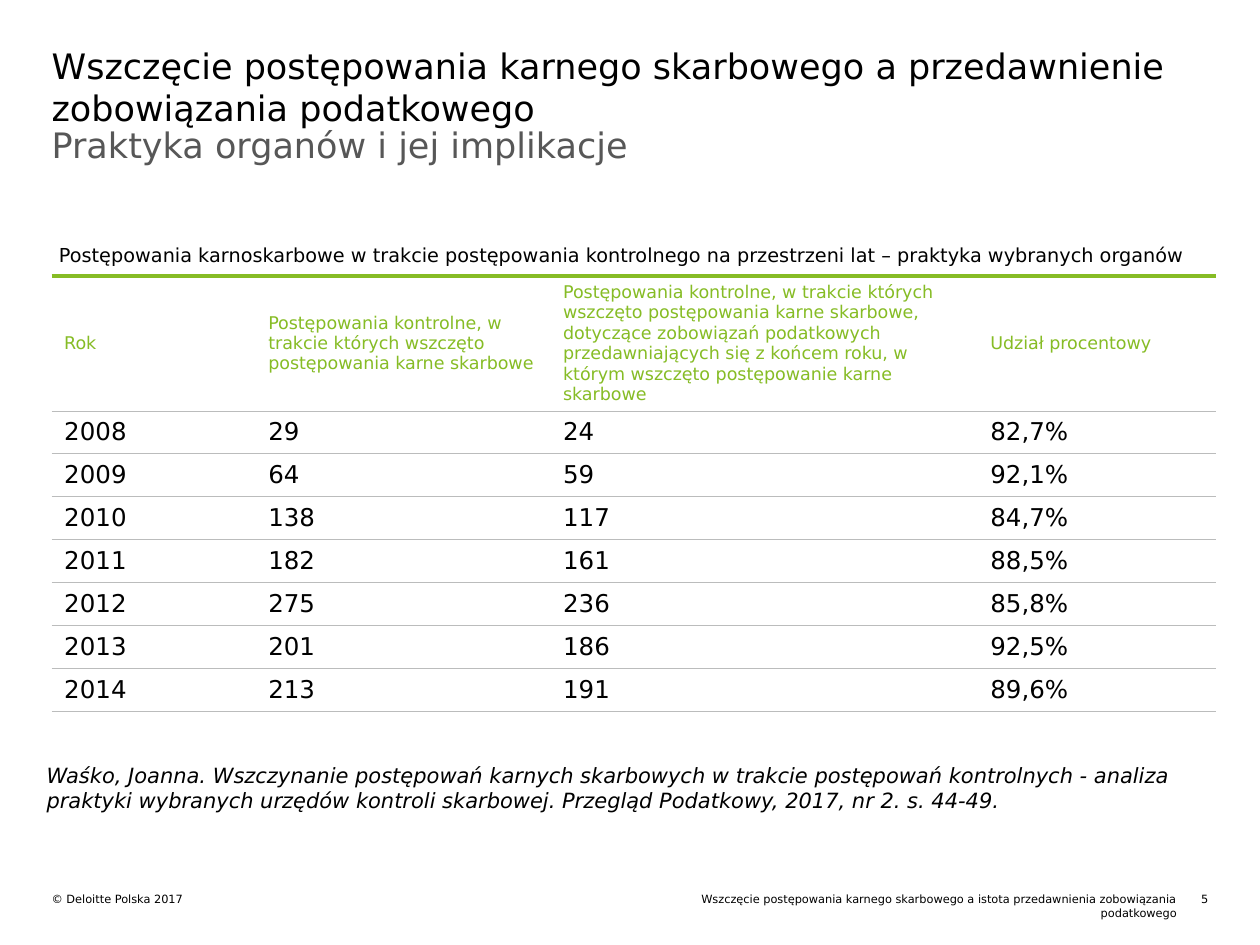
from dataclasses import dataclass

from lxml.etree import SubElement
from pptx import Presentation
from pptx.dml.color import RGBColor
from pptx.enum.text import MSO_ANCHOR as Anchor, PP_ALIGN as Align
from pptx.oxml.ns import qn
from pptx.util import Pt

FONT = "DejaVu Sans"
COLORS = {"black": "000000", "gray": "575757", "green": "86BC25", "rule": "BBBCBC"}
NO_STYLE = "{2D5ABB26-0587-4C30-8999-92F81FD0307C}"


@dataclass(frozen=True)
class Label:
    text: str
    left: float
    top: float
    width: float
    height: float
    size: float
    color: str = "black"
    align: Align = Align.LEFT
    italic: bool = False
    inset: tuple[float, float] = (0, 0)
    space_after: float = 0


@dataclass(frozen=True)
class Rule:
    color: str
    width: float


HEAVY = Rule("green", 3)
THIN = Rule("rule", 0.5)

LABELS = [
    Label("© Deloitte Polska 2017", 29.5, 509.8, 316, 8, 6.5),
    Label("Wszczęcie postępowania karnego skarbowego a istota przedawnienia "
          "zobowiązania podatkowego", 383, 509.8, 289.5, 16, 6.5, align=Align.RIGHT),
    Label("5", 672.5, 509.8, 18, 8, 6.5, align=Align.RIGHT),
    Label("Wszczęcie postępowania karnego skarbowego a przedawnienie "
          "zobowiązania podatkowego", 29.5, 25.2, 659.5, 26.6, 20),
    Label("Postępowania karnoskarbowe w trakcie postępowania kontrolnego na "
          "przestrzeni lat – praktyka wybranych organów",
          26.6, 135.4, 662.4, 22.3, 11, inset=(7.2, 3.6), space_after=10),
    Label("Praktyka organów i jej implikacje",
          29.5, 70.6, 659.5, 59.8, 20, "gray", space_after=10),
    Label("Waśko, Joanna. Wszczynanie postępowań karnych skarbowych w trakcie "
          "postępowań kontrolnych - analiza praktyki wybranych urzędów kontroli "
          "skarbowej. Przegląd Podatkowy, 2017, nr 2. s. 44-49.",
          26.6, 435.6, 668.2, 28.8, 12, italic=True),
]

STARTED = "Postępowania kontrolne, w trakcie których wszczęto postępowania karne skarbowe"
ROWS = [
    ("Rok", STARTED,
     STARTED + ", dotyczące zobowiązań podatkowych przedawniających się z końcem "
     "roku, w którym wszczęto postępowanie karne skarbowe", "Udział procentowy"),
    ("2008", "29", "24", "82,7%"),
    ("2009", "64", "59", "92,1%"),
    ("2010", "138", "117", "84,7%"),
    ("2011", "182", "161", "88,5%"),
    ("2012", "275", "236", "85,8%"),
    ("2013", "201", "186", "92,5%"),
    ("2014", "213", "191", "89,6%"),
]
COLUMN_WIDTHS = (116.6, 168.5, 244.1, 136.1)
HEADER_HEIGHT = 42
ROW_HEIGHT = 24.5


def add_span(para, text: str, size: float, color: str, italic: bool = False) -> None:
    span = para.add_run()
    span.text = text
    span.font.name = FONT
    span.font.size = Pt(size)
    span.font.italic = italic
    span.font.color.rgb = RGBColor.from_string(COLORS[color])


def add_label(page, label: Label) -> None:
    box = page.shapes.add_textbox(
        Pt(label.left), Pt(label.top), Pt(label.width), Pt(label.height))
    frame = box.text_frame
    frame.word_wrap = True
    frame.margin_left = frame.margin_right = Pt(label.inset[0])
    frame.margin_top = frame.margin_bottom = Pt(label.inset[1])
    para = frame.paragraphs[0]
    para.alignment = label.align
    para.space_after = Pt(label.space_after)
    add_span(para, label.text, label.size, label.color, label.italic)


def add_border(cell, side: str, rule: Rule) -> None:
    properties = cell._tc.get_or_add_tcPr()
    line = SubElement(properties, qn(f"a:{side}"), w=str(Pt(rule.width)))
    fill = SubElement(line, qn("a:solidFill"))
    SubElement(fill, qn("a:srgbClr"), val=COLORS[rule.color])


def fill_cell(cell, text: str, is_header: bool) -> None:
    cell.vertical_anchor = Anchor.MIDDLE
    cell.margin_left = cell.margin_right = Pt(7.2)
    cell.margin_top = cell.margin_bottom = Pt(3.6)
    add_border(cell, "lnT", HEAVY if is_header else THIN)
    add_border(cell, "lnB", THIN)
    cell.fill.background()
    size, color = (10, "green") if is_header else (14, "black")
    add_span(cell.text_frame.paragraphs[0], text, size, color)


def add_proceedings_table(page) -> None:
    height = HEADER_HEIGHT + ROW_HEIGHT * (len(ROWS) - 1)
    table = page.shapes.add_table(
        len(ROWS), len(COLUMN_WIDTHS), Pt(29.5), Pt(157.7),
        Pt(sum(COLUMN_WIDTHS)), Pt(height)).table
    table.first_row = False
    table.horz_banding = False
    table._tbl.tblPr.find(qn("a:tableStyleId")).text = NO_STYLE
    for column, width in zip(table.columns, COLUMN_WIDTHS):
        column.width = Pt(width)
    for index, values in enumerate(ROWS):
        is_header = index == 0
        table.rows[index].height = Pt(HEADER_HEIGHT if is_header else ROW_HEIGHT)
        for cell, text in zip(table.rows[index].cells, values):
            fill_cell(cell, text, is_header)


def main() -> None:
    deck = Presentation()
    deck.slide_width, deck.slide_height = Pt(720), Pt(540)
    page = deck.slides.add_slide(deck.slide_layouts[6])
    add_proceedings_table(page)
    for label in LABELS:
        add_label(page, label)
    deck.save("out.pptx")


if __name__ == "__main__":
    main()
